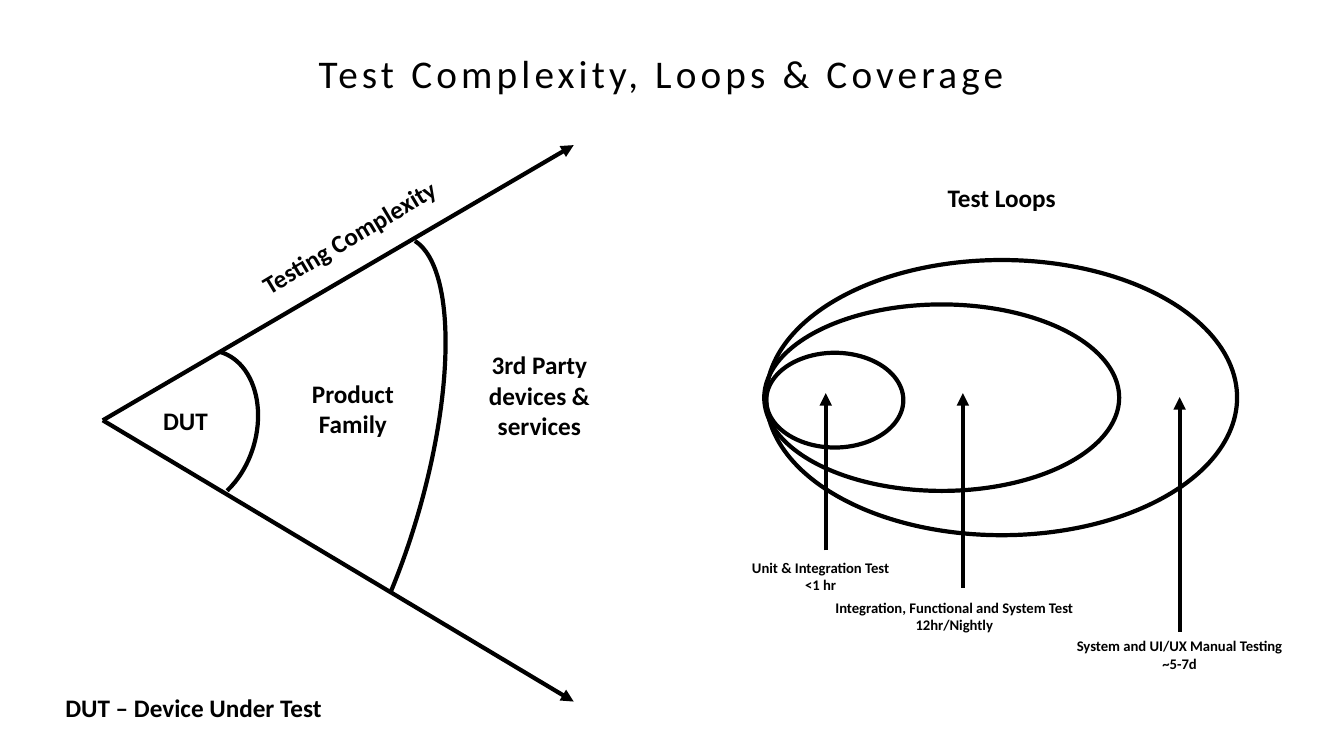
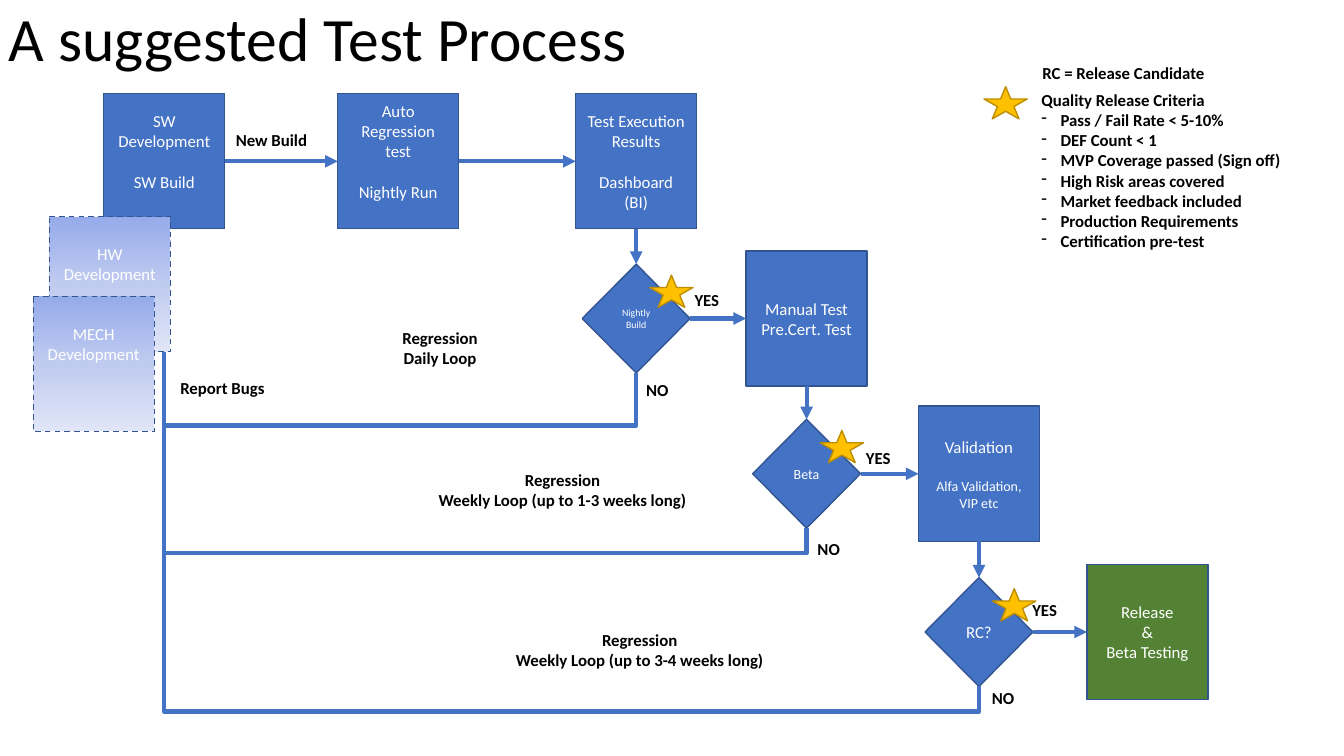
import copy

import lxml.etree
import pptx
import pptx.dml.color
import pptx.enum.dml
import pptx.enum.shapes
import pptx.enum.text
import pptx.oxml.ns
import pptx.util

Inches = pptx.util.Inches
SHAPE = pptx.enum.shapes.MSO_SHAPE
CONNECTOR = pptx.enum.shapes.MSO_CONNECTOR
ALIGN = pptx.enum.text.PP_ALIGN
qn = pptx.oxml.ns.qn

BLACK, WHITE = "000000", "FFFFFF"
BLUE, NAVY, GREEN = "4472C4", "325491", "548235"
GOLD, DARK_GOLD = "FFC000", "BD8E00"
FADE = ["96ABEA", "C0CBF0", "E0E5F7"]
TOP, LEFT, BOTTOM, RIGHT = range(4)
BOX_W, BOX_H = 1.2, 1.34
DIAMOND_W, DIAMOND_H = 1.07, 1.08


def rgb(value):
    return pptx.dml.color.RGBColor.from_string(value)


class Deck:
    """Shared style and the slide being drawn."""

    font = "Calibri"
    stroke = 3

    def __init__(self):
        self.prs = pptx.Presentation()
        self.prs.slide_width = Inches(13.33)
        self.prs.slide_height = Inches(7.5)
        self.slide = None

    def new_slide(self):
        self.slide = self.prs.slides.add_slide(self.prs.slide_layouts[6])

    def format(self, frame, size, color, bold=False, align=ALIGN.CENTER):
        for paragraph in frame.paragraphs:
            paragraph.alignment = align
            for run in paragraph.runs:
                run.font.name = self.font
                run.font.size = pptx.util.Pt(size)
                run.font.bold = bold
                run.font.color.rgb = rgb(color)

    def text(self, at, words, size=12, bold=True, align=ALIGN.LEFT, rotation=0):
        box = self.slide.shapes.add_textbox(*map(Inches, at))
        box.rotation = rotation
        frame = box.text_frame
        frame.word_wrap = True
        frame.auto_size = pptx.enum.text.MSO_AUTO_SIZE.SHAPE_TO_FIT_TEXT
        frame.text = words
        self.format(frame, size, BLACK, bold, align)
        return frame

    def title(self, left, top, words, size, align=ALIGN.LEFT, tracking=0):
        frame = self.text((left, top, 11.5, 1.45), words, size, False, align)
        frame.auto_size = pptx.enum.text.MSO_AUTO_SIZE.NONE
        paragraph = frame.paragraphs[0]
        paragraph.line_spacing = 0.9
        if tracking:
            paragraph.runs[0].font.element.set("spc", str(tracking * 100)) if hasattr(
                paragraph.runs[0].font, "element") else paragraph.runs[0]._r.get_or_add_rPr().set(
                "spc", str(tracking * 100))

    def bullets(self, paragraphs):
        for paragraph in paragraphs:
            props = paragraph._p.get_or_add_pPr()
            props.set("marL", str(Inches(0.19)))
            props.set("indent", str(-Inches(0.19)))
            lxml.etree.SubElement(props, qn("a:buChar")).set("char", "-")

    def shape(self, kind, at, fill=None, line=BLACK, width=1):
        shape = self.slide.shapes.add_shape(kind, *map(Inches, at))
        shape.shadow.inherit = False
        if fill:
            shape.fill.solid()
            shape.fill.fore_color.rgb = rgb(fill)
        else:
            shape.fill.background()
        shape.line.color.rgb = rgb(line)
        shape.line.width = pptx.util.Pt(width)
        return shape

    def outline(self, kind, at, rotation=0, angles=()):
        shape = self.shape(kind, at, width=self.stroke)
        shape.rotation = rotation
        for index, angle in enumerate(angles):
            shape.adjustments[index] = angle

    def node(self, kind, at, words, size=12, fill=BLUE, empty_below=0):
        """Filled shape with centred text, raised by empty_below inches."""
        shape = self.shape(kind, at, fill, NAVY)
        frame = shape.text_frame
        frame.word_wrap = True
        frame.vertical_anchor = pptx.enum.text.MSO_ANCHOR.MIDDLE
        frame.margin_bottom = Inches(0.05 + empty_below)
        frame.text = words
        self.format(frame, size, WHITE)
        return shape

    def process(self, left, top, words, gap_before=None, **style):
        box = self.node(SHAPE.FLOWCHART_PROCESS, (left, top, BOX_W, BOX_H), words, **style)
        if gap_before:
            box.text_frame.paragraphs[gap_before].space_before = pptx.util.Pt(14.6)
        return box

    def faded_process(self, left, top, words):
        box = self.process(left, top, words, empty_below=0.4)
        box.line.dash_style = pptx.enum.dml.MSO_LINE.DASH
        box.fill.gradient()
        box.fill.gradient_angle = 270
        stops = next(box.element.iter(qn("a:gsLst")))
        middle = copy.deepcopy(stops[0])
        middle.set("pos", "50000")
        stops.insert(1, middle)
        for stop, color in zip(box.fill.gradient_stops, FADE):
            stop.color.rgb = rgb(color)

    def star(self, left, top):
        self.shape(SHAPE.STAR_5_POINT, (left, top, 0.43, 0.32), GOLD, DARK_GOLD)

    def arrow(self, start, end, color=BLACK, kind=CONNECTOR.STRAIGHT):
        line = self.slide.shapes.add_connector(kind, *map(Inches, (*start, *end)))
        line.line.color.rgb = rgb(color)
        line.line.width = pptx.util.Pt(self.stroke)
        lxml.etree.SubElement(line.line._get_or_add_ln(), qn("a:tailEnd")).set("type", "triangle")
        lxml.etree.SubElement(line.element.spPr, qn("a:effectLst"))
        return line

    def join(self, source, source_side, target, target_side, kind=CONNECTOR.STRAIGHT):
        line = self.arrow((0, 0), (1, 1), BLUE, kind)
        line.begin_connect(source, source_side)
        line.end_connect(target, target_side)
        return line

    def loop_back(self, source, target, drop):
        """Elbow from the source's bottom, down by drop, to the target's bottom."""
        line = self.join(source, BOTTOM, target, BOTTOM, CONNECTOR.ELBOW)
        across = abs(line.begin_x - line.end_x)
        rise = abs(line.begin_y - line.end_y)
        center_x = (line.begin_x + line.end_x) // 2
        center_y = (line.begin_y + line.end_y) // 2
        line.left, line.top = center_x - rise // 2, center_y - across // 2
        line.width, line.height = rise, across
        frame = line.element.spPr.find(qn("a:xfrm"))
        frame.attrib.pop("flipV", None)
        frame.set("rot", "5400000")
        frame.set("flipH", "1")
        guide = lxml.etree.SubElement(next(line.element.iter(qn("a:avLst"))), qn("a:gd"))
        guide.set("name", "adj1")
        guide.set("fmla", f"val {round(-Inches(drop) / rise * 100000)}")


def complexity_slide(deck):
    deck.new_slide()

    # Widening test scope
    for tip_y in (1.44, 6.96):
        deck.arrow((1.02, 4.17), (5.69, tip_y))
    for at, words, rotation in [
        ((1.46, 3.97, 0.76, 0.4), "DUT", 0),
        ((2.15, 2.15, 2.62, 0.4), "Testing Complexity", 329.2),
        ((4.67, 3.42, 1.36, 1.01), "3rd Party devices & services", 0),
        ((2.82, 3.7, 1.36, 0.71), "Product Family", 0),
        ((8.36, 1.76, 3.15, 0.4), "Test Loops", 0),
        ((0.37, 6.82, 3.1, 0.4), "DUT – Device Under Test", 0),
    ]:
        deck.text(at, words, 18, align=ALIGN.CENTER, rotation=rotation)
    deck.outline(SHAPE.ARC, (1.38, 3.46, 1.16, 1.6), 16.3, (162, 28.77))
    deck.outline(SHAPE.ARC, (2.43, 2.25, 1.75, 5.22), 16.3, (163.13, 26.56))

    # Nested test loops: ellipse, label, arrow x, arrow bottom and tip
    for ellipse, label, words, x, bottom, tip in [
        ((7.6, 3.5, 1.36, 0.94), (7.01, 5.49, 2.26, 0.45),
         "Unit & Integration Test\n<1 hr", 8.19, 5.46, 3.9),
        ((7.58, 3.02, 3.52, 1.85), (7.92, 5.89, 3.09, 0.45),
         "Integration, Functional and System Test\n12hr/Nightly", 9.55, 5.83, 3.9),
        ((7.6, 2.58, 4.67, 2.73), (10.35, 6.27, 2.7, 0.45),
         "System and UI/UX Manual Testing\n~5-7d", 11.7, 6.27, 3.94),
    ]:
        deck.outline(SHAPE.OVAL, ellipse)
        deck.text(label, words, 10.5, align=ALIGN.CENTER)
        deck.arrow((x, bottom), (x, tip))

    deck.title(0.81, 0.49, "Test Complexity, Loops & Coverage", 28, ALIGN.CENTER, tracking=3)


def process_slide(deck):
    deck.new_slide()
    deck.title(-0.01, 0.03, "A suggested Test Process", 44)

    # Process steps
    development = deck.process(1.03, 0.93, "SW Development\nSW Build", 1, empty_below=0.2)
    regression = deck.process(3.35, 0.93, "Auto Regression test\nNightly Run", 1, empty_below=0.2)
    results = deck.process(5.71, 0.93, "Test Execution Results\nDashboard\n(BI)", 1)
    manual = deck.process(7.4, 2.49, "Manual Test\nPre.Cert. Test")
    validation = deck.process(9.11, 4.03, "Validation\nAlfa Validation,\nVIP etc", 1)
    for paragraph in validation.text_frame.paragraphs[1:]:
        paragraph.runs[0].font.size = pptx.util.Pt(10)
    release = deck.process(10.78, 5.6, "Release\n&\nBeta Testing", fill=GREEN)
    deck.join(development, RIGHT, regression, LEFT)
    deck.join(regression, RIGHT, results, LEFT)

    # Gates: each sits below one step and level with the next
    for step, following, words, size, drop, yes, no in [
        (results, manual, "Nightly Build", 7, 0.52, (6.79, 2.83), (6.31, 3.72)),
        (manual, validation, "Beta", 10, 0.25, (8.49, 4.39), (8.01, 5.3)),
        (validation, release, "RC?", 12, 0.25, (10.14, 5.9), (9.74, 6.77)),
    ]:
        left = step.left.inches + (BOX_W - DIAMOND_W) / 2
        top = following.top.inches + (BOX_H - DIAMOND_H) / 2
        gate = deck.node(SHAPE.FLOWCHART_DECISION, (left, top, DIAMOND_W, DIAMOND_H), words, size)
        deck.join(step, BOTTOM, gate, TOP)
        deck.join(gate, RIGHT, following, LEFT)
        deck.loop_back(gate, development, drop)
        deck.star(left + 0.67, top + 0.11)
        deck.text((*yes, 0.64, 0.3), "YES")
        deck.text((*no, 0.64, 0.3), "NO")

    # Parallel development, over the loop lines
    deck.faded_process(0.49, 2.15, "HW Development")
    deck.faded_process(0.33, 2.94, "MECH Development")

    # Flow and loop labels
    deck.text((2.24, 1.24, 1.07, 0.3), "New Build")
    deck.text((1.69, 3.7, 1.26, 0.3), "Report Bugs")
    for at, loop in [
        ((3.26, 3.2, 2.21, 0.5), "Daily Loop"),
        ((4.1, 4.61, 2.96, 0.5), "Weekly Loop (up to 1-3 weeks long)"),
        ((4.69, 6.2, 3.31, 0.5), "Weekly Loop (up to 3-4 weeks long)"),
    ]:
        deck.text(at, f"Regression\n{loop}", align=ALIGN.CENTER)

    # Legend
    deck.text((10.24, 0.57, 2.87, 0.3), "RC = Release Candidate")
    deck.star(9.76, 0.86)
    criteria = deck.text((10.23, 0.84, 3.32, 1.72), "\n".join([
        "Quality Release Criteria",
        "Pass / Fail Rate < 5-10%",
        "DEF Count < 1",
        "MVP Coverage passed (Sign off)",
        "High Risk areas covered",
        "Market feedback included",
        "Production Requirements",
        "Certification pre-test",
    ]))
    deck.bullets(criteria.paragraphs[1:])


def main():
    deck = Deck()
    complexity_slide(deck)
    process_slide(deck)
    deck.prs.save("out.pptx")


if __name__ == "__main__":
    main()
